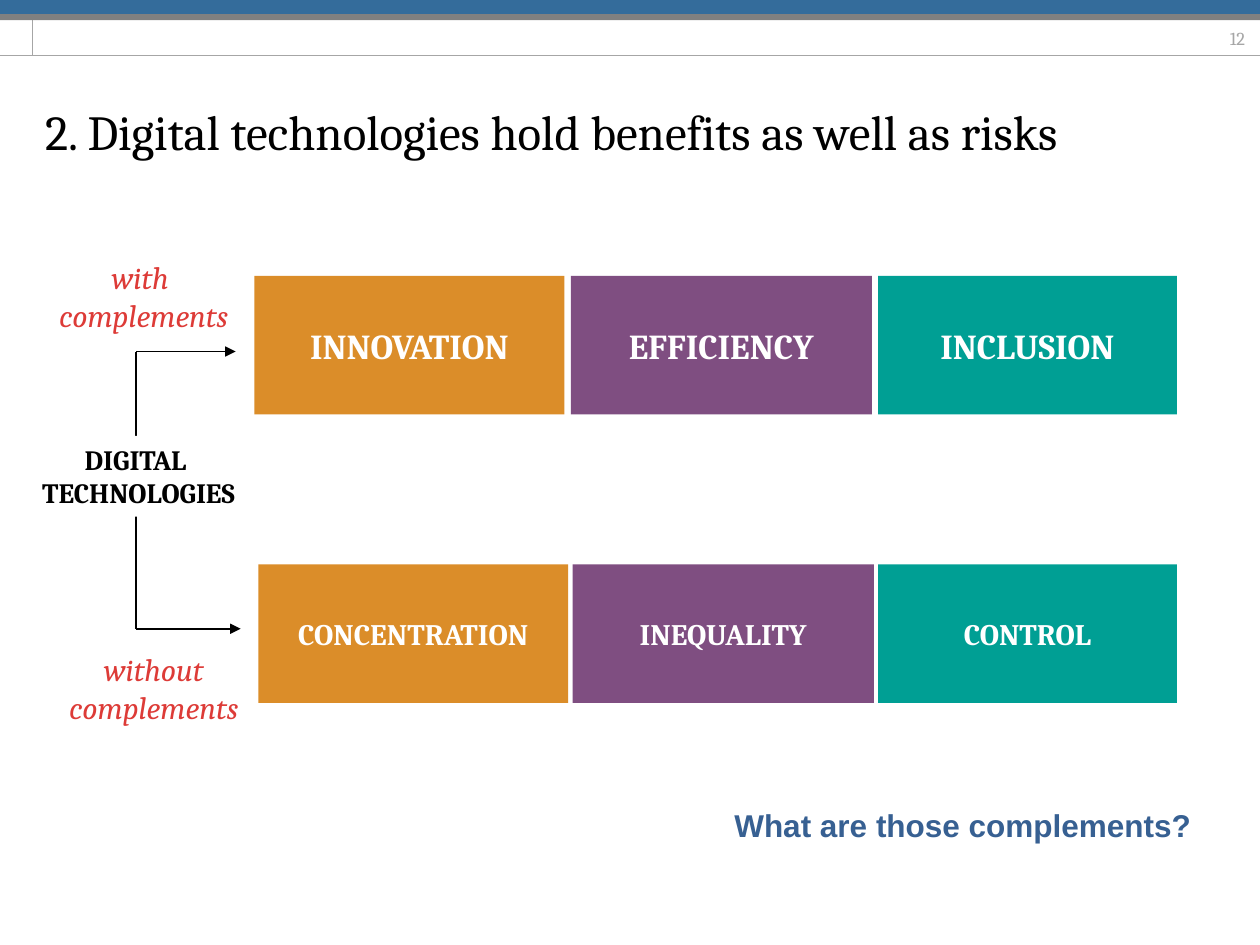
from lxml import etree
from pptx import Presentation
from pptx.dml.color import RGBColor
from pptx.enum.shapes import MSO_CONNECTOR, MSO_SHAPE
from pptx.enum.text import MSO_ANCHOR, PP_ALIGN
from pptx.oxml.ns import qn
from pptx.util import Inches, Pt

STRAIGHT = MSO_CONNECTOR.STRAIGHT
RECTANGLE = MSO_SHAPE.RECTANGLE
TOP, MIDDLE = MSO_ANCHOR.TOP, MSO_ANCHOR.MIDDLE
LEFT, CENTER, RIGHT = PP_ALIGN.LEFT, PP_ALIGN.CENTER, PP_ALIGN.RIGHT

SLIDE_WIDTH, SLIDE_HEIGHT = Inches(10), Inches(7.5)
COLUMN, ROW = SLIDE_WIDTH / 100, SLIDE_HEIGHT / 75

COLORS = {
    "white": "FFFFFF", "black": "000000", "rule": "A6A6A6", "band": "808080",
    "banner": "346C9B", "orange": "DB8D29", "purple": "7F4E81",
    "teal": "009F94", "red": "DD3B37", "question": "376092",
}
CARD_STYLES = [(24.6, "orange"), (23.9, "purple"), (23.7, "teal")]


def color(name):
    """Return the named colour."""
    return RGBColor.from_string(COLORS[name])


def place(box):
    """Turn a box in columns and rows into slide lengths."""
    left, top, width, height = box
    return [round(n) for n in (left * COLUMN, top * ROW, width * COLUMN, height * ROW)]


def add_line(slide, start, end, ink, width, arrow=False):
    """Draw a straight line between two grid points."""
    (x1, y1), (x2, y2) = start, end
    line = slide.shapes.add_connector(
        STRAIGHT, round(x1 * COLUMN), round(y1 * ROW), round(x2 * COLUMN), round(y2 * ROW))
    line.line.color.rgb = color(ink)
    line.line.width = Pt(width)
    if arrow:
        etree.SubElement(line.line._get_or_add_ln(), qn("a:tailEnd"), type="triangle")
    etree.SubElement(line._element.spPr, qn("a:effectLst"))


def add_block(slide, box, fill):
    """Draw a flat filled rectangle."""
    block = slide.shapes.add_shape(RECTANGLE, *place(box))
    block.shadow.inherit = False
    block.fill.solid()
    block.fill.fore_color.rgb = color(fill)
    block.line.fill.background()
    return block


def write(holder, paragraphs, size, ink, align=LEFT, anchor=TOP, wrap=True,
          face="Cambria", bold=False, italic=False):
    """Write paragraphs, each a list of lines, into a shape."""
    frame = holder.text_frame
    frame.word_wrap = wrap
    frame.vertical_anchor = anchor
    for index, lines in enumerate(paragraphs):
        paragraph = frame.add_paragraph() if index else frame.paragraphs[0]
        paragraph.alignment = align
        for number, line in enumerate(lines):
            if number:
                paragraph.add_line_break()
            run = paragraph.add_run()
            run.text = line
            run.font.name = face
            run.font.size = Pt(size)
            run.font.bold = bold
            run.font.italic = italic
            run.font.color.rgb = color(ink)


def add_label(slide, box, paragraphs, size, ink, **style):
    """Add a text box with its writing."""
    write(slide.shapes.add_textbox(*place(box)), paragraphs, size, ink, **style)


def add_header(slide, box):
    """Draw the banner, the rules and the page number."""
    left, top, width, height = box
    bottom = top + height
    add_line(slide, (left + 2.6, top), (left + 2.6, bottom), "rule", 0.5)
    add_line(slide, (left, bottom), (left + width, bottom), "rule", 0.5)
    add_label(slide, (left + width - 4.7, top + 1, 4.5, 4), [["12"]], 10.5, "rule",
              align=RIGHT, anchor=MIDDLE)
    add_block(slide, (left, top + 1.1, width, 0.5), "band")
    add_block(slide, (left, top, width, 1.1), "banner")


def add_fork(slide, box):
    """Draw the two arrows that branch from the digital technologies label."""
    left, top, width, height = box
    bottom = top + height
    add_line(slide, (left, top), (left, bottom), "black", 1)
    add_line(slide, (left, bottom), (left + width, bottom), "black", 1, arrow=True)
    add_line(slide, (left, top), (left + width - 0.4, top), "black", 1, arrow=True)
    source = add_block(slide, (left - 10.2, top + 6.7, 20.8, 6.4), "white")
    write(source, [["DIGITAL ", "TECHNOLOGIES"]], 16, "black",
          align=CENTER, wrap=False, bold=True)


def add_cards(slide, box, outcomes, size):
    """Spread the outcome cards over the box with equal gaps."""
    left, top, width, height = box
    gap = (width - sum(card for card, _ in CARD_STYLES)) / (len(CARD_STYLES) - 1)
    for outcome, (card_width, fill) in zip(outcomes, CARD_STYLES):
        card = add_block(slide, (left, top, card_width, height), fill)
        write(card, [[outcome]], size, "white", align=CENTER, anchor=MIDDLE, bold=True)
        left += card_width + gap


def main():
    """Build the slide and save it."""
    deck = Presentation()
    deck.slide_width, deck.slide_height = SLIDE_WIDTH, SLIDE_HEIGHT
    slide = deck.slides.add_slide(deck.slide_layouts[6])

    add_header(slide, (0, 0, 100, 4.4))
    add_fork(slide, (10.8, 27.9, 8.3, 22))
    add_cards(slide, (20.2, 21.9, 73.2, 11), ["INNOVATION", "EFFICIENCY", "INCLUSION"], 20)
    add_cards(slide, (20.5, 44.8, 72.9, 11), ["CONCENTRATION", "INEQUALITY", "CONTROL"], 17)
    add_label(slide, (2.6, 6.9, 92.5, 6.9),
              [["2. Digital technologies hold benefits as well as risks"]], 28, "black",
              anchor=MIDDLE)
    add_label(slide, (57.3, 63.5, 38.6, 4), [["What are those complements?"]], 18, "question",
              wrap=False, face="Arial", bold=True)
    for condition, left, top in [("with ", 3.5, 20), ("without", 4.3, 51.1)]:
        add_label(slide, (left, top, 15.8, 7.1), [[condition], ["complements"]], 18, "red",
                  align=CENTER, wrap=False, italic=True)
    deck.save("out.pptx")


if __name__ == "__main__":
    main()
